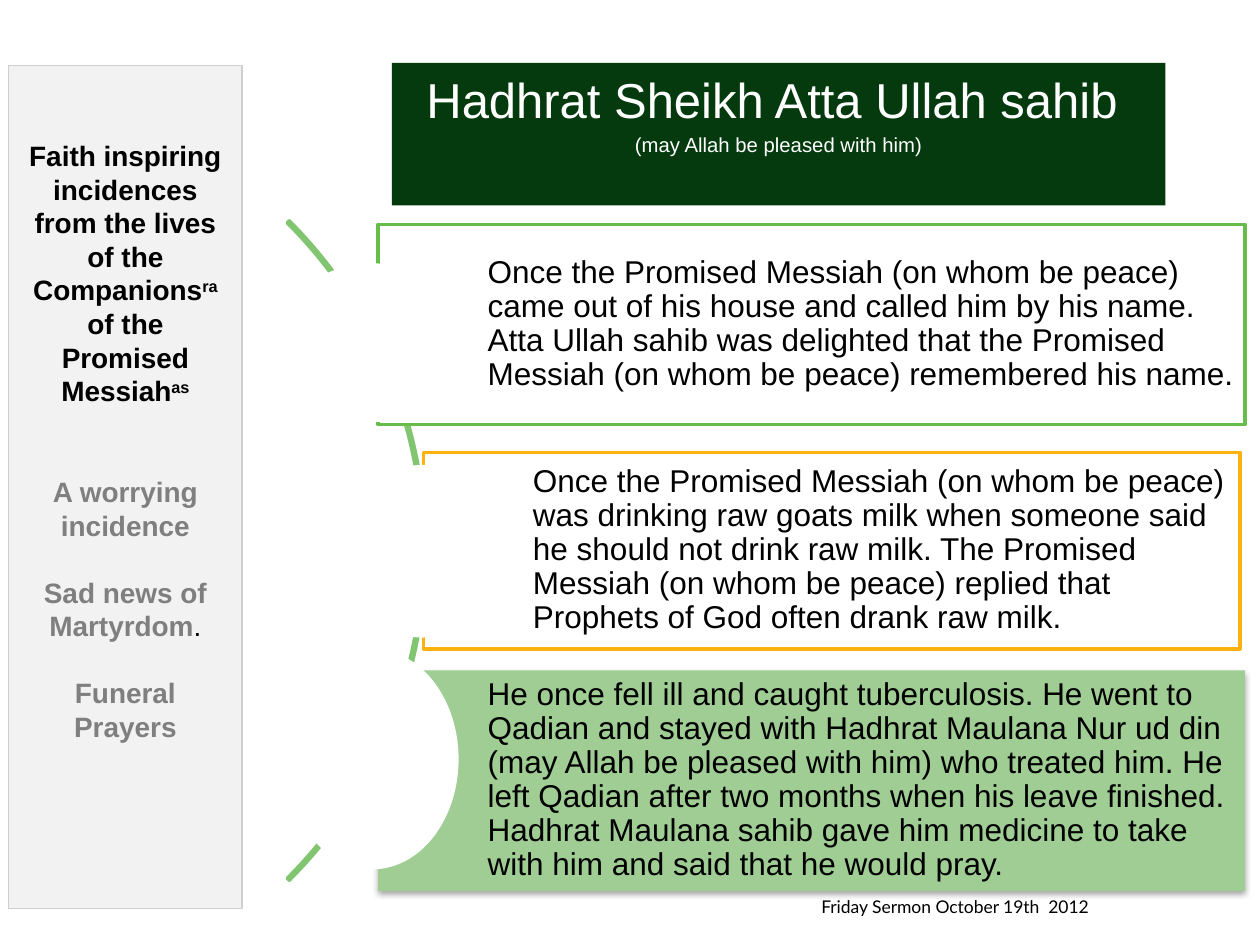
"""Build a sermon slide with a sidebar, a title and three story cards on an arc."""
from dataclasses import dataclass
from typing import Optional

import lxml.etree
import pptx
import pptx.dml.color
import pptx.enum.shapes
import pptx.enum.text
import pptx.oxml.ns
import pptx.util

Inches = pptx.util.Inches
Pt = pptx.util.Pt
RGBColor = pptx.dml.color.RGBColor
Shape = pptx.enum.shapes.MSO_SHAPE
Align = pptx.enum.text.PP_ALIGN
Anchor = pptx.enum.text.MSO_ANCHOR

BLACK = RGBColor(0x00, 0x00, 0x00)
WHITE = RGBColor(0xFF, 0xFF, 0xFF)
GREY = RGBColor(0x7F, 0x7F, 0x7F)
PANEL = RGBColor(0xF2, 0xF2, 0xF2)
PANEL_EDGE = RGBColor(0xCF, 0xCF, 0xCF)
DARK_GREEN = RGBColor(0x04, 0x3A, 0x0D)
ARC_GREEN = RGBColor(0x81, 0xC5, 0x70)
CARD_GREEN = RGBColor(0x66, 0xBD, 0x49)
PALE_GREEN = RGBColor(0x9F, 0xCD, 0x94)
AMBER = RGBColor(0xFF, 0xB1, 0x0F)

SIDEBAR_LINE = 19.2


@dataclass(frozen=True)
class Run:
    text: str
    color: RGBColor = BLACK
    size: float = 18
    bold: bool = False
    raised: bool = False


@dataclass(frozen=True)
class Paragraph:
    runs: tuple[Run, ...]
    space_before: float = 0


@dataclass(frozen=True)
class Box:
    left: float
    top: float
    width: float
    height: float


@dataclass(frozen=True)
class Card:
    box: Box
    circle: Box
    text: str
    fill: RGBColor = WHITE
    line: Optional[RGBColor] = None


def heading(text: str, **options) -> Run:
    """Return a bold sidebar run."""
    return Run(text, size=16, bold=True, **options)


SIDEBAR = (
    Paragraph((heading("Faith inspiring incidences from the lives of the Companions"),
               heading("ra", raised=True),
               heading(" of the Promised Messiah"),
               heading("as", raised=True))),
    Paragraph((heading("A worrying incidence", color=GREY),), 2 * SIDEBAR_LINE),
    Paragraph((heading("Sad news of Martyrdom", color=GREY), Run(".", size=16)), SIDEBAR_LINE),
    Paragraph((heading("Funeral Prayers", color=GREY),), SIDEBAR_LINE),
)

TITLE = (
    Paragraph((Run("Hadhrat Sheikh Atta Ullah sahib ", WHITE, 28),)),
    Paragraph((Run("(may Allah be pleased with him)", WHITE, 20, raised=True),)),
)

CARDS = (
    Card(Box(3, 1.78, 6.88, 1.59), Box(2.21, 2.09, 1.49, 1.26),
         "Once the Promised Messiah (on whom be peace) came out of his house and called him "
         "by his name. Atta Ullah sahib was delighted that the Promised Messiah (on whom be "
         "peace) remembered his name.", line=CARD_GREEN),
    Card(Box(3.36, 3.59, 6.48, 1.56), Box(2.67, 3.69, 1.37, 1.37),
         "Once the Promised Messiah (on whom be peace) was drinking raw goats milk when "
         "someone said he should not drink raw milk. The Promised Messiah (on whom be peace) "
         "replied that Prophets of God often drank raw milk.", line=AMBER),
    Card(Box(3, 5.32, 6.88, 1.75), Box(2.27, 5.15, 1.37, 1.75),
         "He once fell ill and caught tuberculosis. He went to Qadian and stayed with Hadhrat "
         "Maulana Nur ud din (may Allah be pleased with him) who treated him. He left Qadian "
         "after two months when his leave finished. Hadhrat Maulana sahib gave him medicine "
         "to take with him and said that he would pray.", fill=PALE_GREEN),
)


def place(box: Box) -> tuple:
    """Return the box as slide lengths."""
    return Inches(box.left), Inches(box.top), Inches(box.width), Inches(box.height)


def add_shape(slide, kind, box: Box, *, fill: Optional[RGBColor] = None,
              line: Optional[RGBColor] = None, line_width: float = 2):
    """Add a flat preset shape."""
    shape = slide.shapes.add_shape(kind, *place(box))
    shape.shadow.inherit = False
    if fill is None:
        shape.fill.background()
    else:
        shape.fill.solid()
        shape.fill.fore_color.rgb = fill
    if line is None:
        shape.line.fill.background()
    else:
        shape.line.color.rgb = line
        shape.line.width = Pt(line_width)
    return shape


def add_shadow(shape) -> None:
    """Give the shape a soft shadow that falls straight down."""
    effects = shape._element.spPr.find(pptx.oxml.ns.qn("a:effectLst"))
    shadow = lxml.etree.SubElement(
        effects, pptx.oxml.ns.qn("a:outerShdw"), blurRad=str(Pt(3.1)), dist=str(Pt(1.8)),
        dir="5400000", rotWithShape="0")
    color = lxml.etree.SubElement(shadow, pptx.oxml.ns.qn("a:srgbClr"), val=str(BLACK))
    lxml.etree.SubElement(color, pptx.oxml.ns.qn("a:alpha"), val="35000")


def write_text(shape, paragraphs: tuple[Paragraph, ...], *, font: str = "Arial",
               align=Align.LEFT, anchor=Anchor.TOP, line_spacing: float = 1.0,
               left: float = 0.1, right: float = 0.1, top: float = 0.05) -> None:
    """Fill the shape with formatted paragraphs."""
    frame = shape.text_frame
    frame.word_wrap = True
    frame.vertical_anchor = anchor
    frame.margin_left, frame.margin_right = Inches(left), Inches(right)
    frame.margin_top, frame.margin_bottom = Inches(top), Inches(0.05)
    for index, item in enumerate(paragraphs):
        paragraph = frame.add_paragraph() if index else frame.paragraphs[0]
        paragraph.alignment = align
        paragraph.line_spacing = line_spacing
        paragraph.space_before = Pt(item.space_before)
        for part in item.runs:
            run = paragraph.add_run()
            run.text = part.text
            run.font.name = font
            run.font.size = Pt(part.size)
            run.font.bold = part.bold
            run.font.color.rgb = part.color
            if part.raised:
                run.font._element.set("baseline", "30000")


def add_card(slide, card: Card) -> None:
    """Add a story card and the circle that cuts into its left side."""
    shape = add_shape(slide, Shape.RECTANGLE, card.box, fill=card.fill, line=card.line)
    if card.line is None:
        add_shadow(shape)
    write_text(shape, (Paragraph((Run(card.text),)),), anchor=Anchor.MIDDLE,
               line_spacing=0.9, left=0.87, right=0.05)
    add_shape(slide, Shape.OVAL, card.circle, fill=WHITE)


def main() -> None:
    """Build and save the slide."""
    presentation = pptx.Presentation()
    presentation.slide_width, presentation.slide_height = Inches(10), Inches(7.5)
    slide = presentation.slides.add_slide(presentation.slide_layouts[6])

    arc = add_shape(slide, Shape.BLOCK_ARC, Box(-4.02, 0.67, 7.4, 7.4), line=ARC_GREEN)
    for index, value in enumerate((189, 27, 0.003)):
        arc.adjustments[index] = value
    for card in CARDS:
        add_card(slide, card)

    title = add_shape(slide, Shape.RECTANGLE, Box(3.11, 0.5, 6.14, 1.13), fill=DARK_GREEN)
    write_text(title, TITLE, align=Align.CENTER)

    footer = slide.shapes.add_textbox(*place(Box(6.42, 7.06, 2.44, 0.27)))
    write_text(footer, (Paragraph((Run("Friday Sermon October 19th  2012", size=10),)),),
               font="Lato")

    sidebar = add_shape(slide, Shape.RECTANGLE, Box(0.07, 0.52, 1.85, 6.69), fill=PANEL,
                        line=PANEL_EDGE, line_width=0.75)
    write_text(sidebar, SIDEBAR, align=Align.CENTER, top=0.58)
    presentation.save("out.pptx")


if __name__ == "__main__":
    main()
